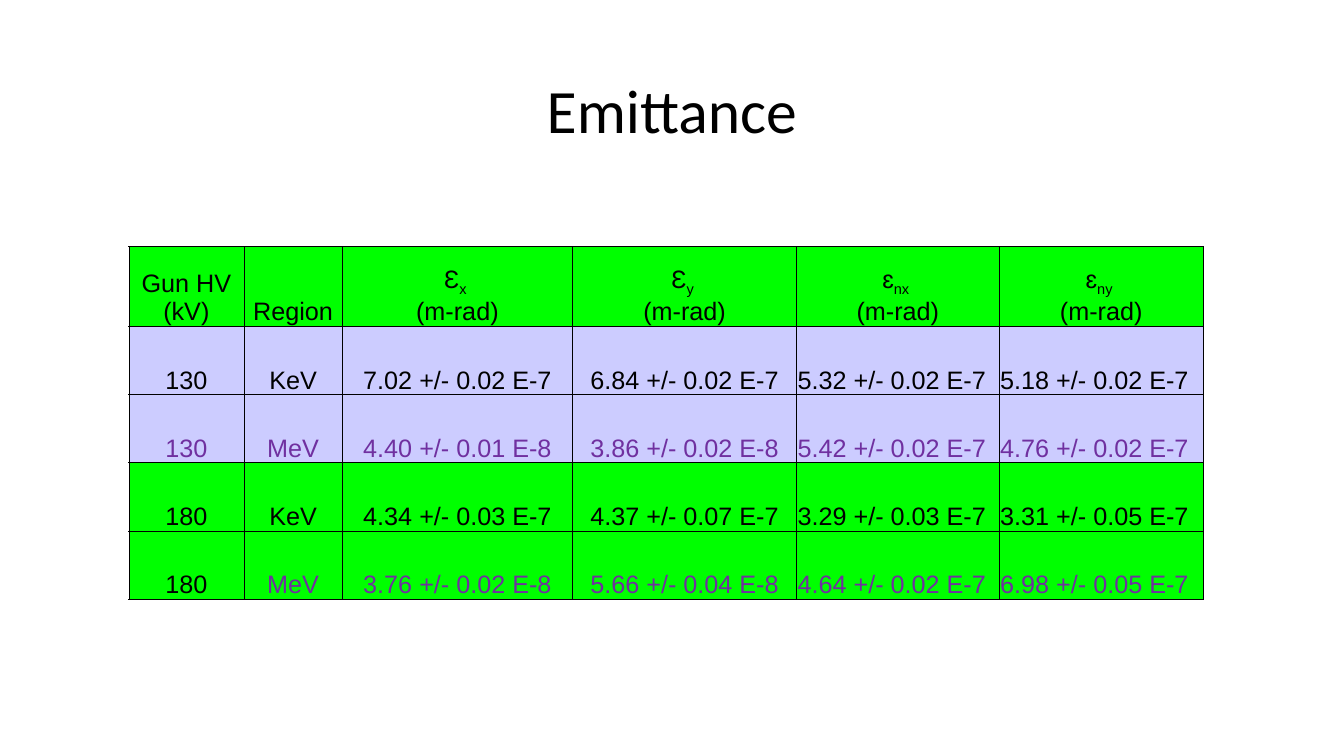
from lxml.etree import SubElement
from pptx import Presentation
from pptx.dml.color import RGBColor
from pptx.enum.text import MSO_ANCHOR, PP_ALIGN
from pptx.oxml.ns import qn
from pptx.util import Pt

PX = 3175
BLACK = RGBColor(0x00, 0x00, 0x00)
PURPLE = RGBColor(0x70, 0x30, 0xA0)
GREEN = RGBColor(0x00, 0xFF, 0x00)
LAVENDER = RGBColor(0xCC, 0xCC, 0xFF)

COLUMN_WIDTHS = [329, 281, 658, 640, 579, 583]
ROW_HEIGHTS = [227] + [195] * 4
CENTRED_COLUMNS = 4
HEADINGS = [
    [["Gun HV (kV)"]],
    [["Region"]],
    [["Ɛ", "x "], ["(m-rad)"]],
    [["Ɛ", "y "], ["(m-rad)"]],
    [["ɛ", "nx "], ["(m-rad)"]],
    [["ɛ", "ny "], ["(m-rad)"]],
]
MEASUREMENTS = [
    ["130", "KeV", "7.02 +/- 0.02 E-7", "6.84 +/- 0.02 E-7",
     "5.32 +/- 0.02 E-7", "5.18 +/- 0.02 E-7"],
    ["130", "MeV", "4.40 +/- 0.01 E-8", "3.86 +/- 0.02 E-8",
     "5.42 +/- 0.02 E-7", "4.76 +/- 0.02 E-7"],
    ["180", "KeV", "4.34 +/- 0.03 E-7", "4.37 +/- 0.07 E-7",
     "3.29 +/- 0.03 E-7", "3.31 +/- 0.05 E-7"],
    ["180", "MeV", "3.76 +/- 0.02 E-8", "5.66 +/- 0.04 E-8",
     "4.64 +/- 0.02 E-7", "6.98 +/- 0.05 E-7"],
]
CELL_FORMAT = {
    "vertical_anchor": MSO_ANCHOR.BOTTOM,
    "margin_left": 3 * PX,
    "margin_top": 3 * PX,
    "margin_right": 3 * PX,
    "margin_bottom": 0,
}


def set_values(target, values):
    for name, value in values.items():
        setattr(target, name, value)


def add_span(para, text, font_name, size, color):
    span = para.add_run()
    span.text = text
    set_values(span.font, {"name": font_name, "size": Pt(size)})
    span.font.color.rgb = color
    return span


def add_borders(cell):
    properties = cell._tc.get_or_add_tcPr()
    for side in ("a:lnL", "a:lnR", "a:lnT", "a:lnB"):
        line = SubElement(properties, qn(side), w=str(Pt(0.5)))
        fill = SubElement(line, qn("a:solidFill"))
        SubElement(fill, qn("a:srgbClr"), val=str(BLACK))


def fill_cell(cell, lines, color, background, alignment):
    add_borders(cell)
    set_values(cell, CELL_FORMAT)
    cell.fill.solid()
    cell.fill.fore_color.rgb = background
    frame = cell.text_frame
    for index, line in enumerate(lines):
        para = frame.add_paragraph() if index else frame.paragraphs[0]
        para.alignment = alignment
        for position, text in enumerate(line):
            span = add_span(para, text, "Arial", 18, color)
            if position:
                span._r.get_or_add_rPr().set("baseline", "-25000")


def add_title(page, text):
    title = page.shapes.title
    set_values(title, {"left": 264 * PX, "top": 115 * PX,
                       "width": 3312 * PX, "height": 417 * PX})
    title.text_frame.vertical_anchor = MSO_ANCHOR.MIDDLE
    para = title.text_frame.paragraphs[0]
    set_values(para, {"alignment": PP_ALIGN.CENTER, "line_spacing": 0.9})
    add_span(para, text, "Calibri", 44, BLACK)


def add_emittance_table(page):
    table = page.shapes.add_table(
        len(ROW_HEIGHTS), len(COLUMN_WIDTHS), 368 * PX, 705 * PX,
        sum(COLUMN_WIDTHS) * PX, sum(ROW_HEIGHTS) * PX).table
    set_values(table, {"first_row": False, "horz_banding": False})
    for column, width in zip(table.columns, COLUMN_WIDTHS):
        column.width = width * PX
    for row, height in zip(table.rows, ROW_HEIGHTS):
        row.height = height * PX
    for column, lines in enumerate(HEADINGS):
        fill_cell(table.cell(0, column), lines, BLACK, GREEN, PP_ALIGN.CENTER)
    for row, values in enumerate(MEASUREMENTS, start=1):
        voltage, region = values[:2]
        background = LAVENDER if voltage == "130" else GREEN
        for column, text in enumerate(values):
            black_voltage = column == 0 and voltage == "180"
            color = PURPLE if region == "MeV" and not black_voltage else BLACK
            centred = column < CENTRED_COLUMNS
            alignment = PP_ALIGN.CENTER if centred else PP_ALIGN.LEFT
            fill_cell(table.cell(row, column), [[text]], color, background, alignment)


def main():
    deck = Presentation()
    set_values(deck, {"slide_width": 3840 * PX, "slide_height": 2160 * PX})
    page = deck.slides.add_slide(deck.slide_layouts[5])
    add_title(page, "Emittance")
    add_emittance_table(page)
    deck.save("out.pptx")


if __name__ == "__main__":
    main()
